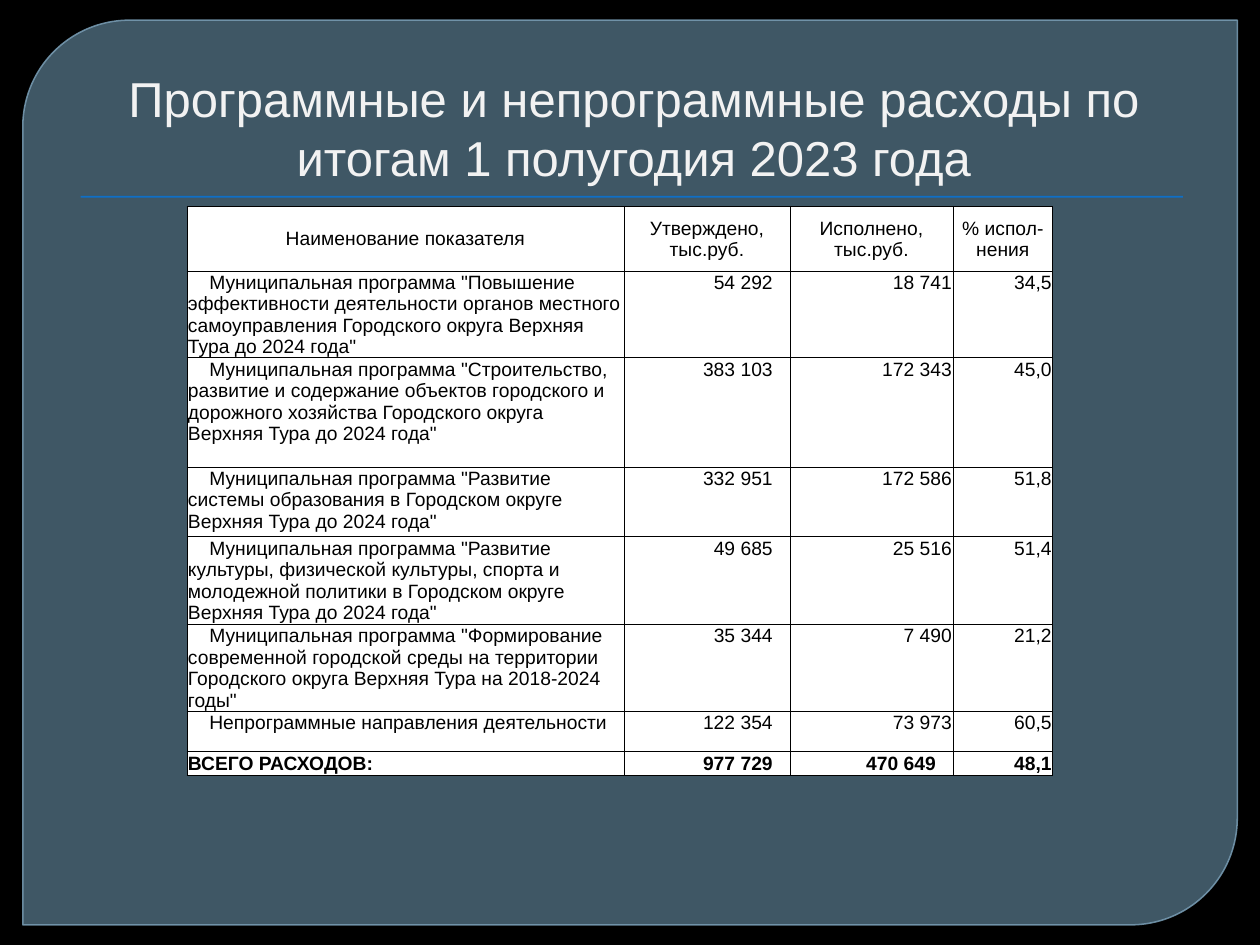
"""Builds the slide on programme and other spending for the first half of 2023."""
from lxml.etree import SubElement
from pptx import Presentation
from pptx.dml.color import RGBColor
from pptx.enum.shapes import MSO_SHAPE
from pptx.enum.text import MSO_ANCHOR, MSO_AUTO_SIZE, PP_ALIGN
from pptx.oxml.ns import qn
from pptx.util import Pt

TITLE = "Программные и непрограммные расходы по итогам 1 полугодия 2023 года"
HEAD = ("Наименование показателя", "Утверждено, тыс.руб.", "Исполнено, тыс.руб.", "% испол-нения")
PLAN = 'Муниципальная программа "{}"'
ROWS = [
    (PLAN.format("Повышение эффективности деятельности органов местного самоуправления "
                 "Городского округа Верхняя Тура до 2024 года"), "54 292", "18 741", "34,5"),
    (PLAN.format("Строительство, развитие и содержание объектов городского и дорожного "
                 "хозяйства Городского округа Верхняя Тура до 2024 года"), "383 103", "172 343", "45,0"),
    (PLAN.format("Развитие системы образования в Городском округе Верхняя Тура до 2024 года"),
     "332 951", "172 586", "51,8"),
    (PLAN.format("Развитие культуры, физической культуры, спорта и молодежной политики "
                 "в Городском округе Верхняя Тура до 2024 года"), "49 685", "25 516", "51,4"),
    (PLAN.format("Формирование современной городской среды на территории Городского округа "
                 "Верхняя Тура на 2018-2024 годы"), "35 344", "7 490", "21,2"),
    ("Непрограммные направления деятельности", "122 354", "73 973", "60,5"),
]
TOTAL = ("ВСЕГО РАСХОДОВ:", "977 729", "470 649", "48,1")
WIDTHS = (249.8, 94.8, 93.2, 57)
HEIGHTS = (37, 49.6, 62.4, 39.8, 50.2, 49.7, 23, 13.3)
COLORS = {"back": "000000", "panel": "61869C", "edge": "779BB2", "rule": "0F6FC6",
          "title": "F2F2F2", "cell": "FFFFFF", "ink": "000000"}


def paint(fill, name, alpha=None):
    fill.solid()
    fill.fore_color.rgb = RGBColor.from_string(COLORS[name])
    if alpha:
        tint = fill._xPr.find(".//" + qn("a:srgbClr"))
        SubElement(tint, qn("a:alpha")).set("val", str(alpha * 1000))


def style(para, size, name, align, bold=False):
    para.alignment = align
    font = para.font
    font.name, font.size, font.bold = "Arial", Pt(size), bold
    font.color.rgb = RGBColor.from_string(COLORS[name])


def add_box(shapes, kind, box, name, alpha=None):
    shape = shapes.add_shape(kind, *map(Pt, box))
    shape.shadow.inherit = False
    paint(shape.fill, name, alpha)
    shape.line.fill.background()
    return shape


def add_edges(cell):
    props = cell._tc.get_or_add_tcPr()
    for spot, side in enumerate(("a:lnL", "a:lnR", "a:lnT", "a:lnB")):
        line = SubElement(props, qn(side), w=str(Pt(0.5)))
        props.insert(spot, line)
        fill = SubElement(line, qn("a:solidFill"))
        SubElement(fill, qn("a:srgbClr"), val=COLORS["ink"])


def fill_cell(cell, text, row, col):
    head, total = row == 0, row == len(HEIGHTS) - 1
    cell.text = text
    cell.margin_left = cell.margin_right = cell.margin_top = Pt(0.6)
    cell.margin_bottom = 0
    cell.vertical_anchor = MSO_ANCHOR.MIDDLE if head else MSO_ANCHOR.TOP
    para = cell.text_frame.paragraphs[0]
    align = PP_ALIGN.CENTER if head else PP_ALIGN.RIGHT if col else PP_ALIGN.LEFT
    style(para, 11, "ink", align, total)
    if total and col == 0:
        cell.vertical_anchor = MSO_ANCHOR.BOTTOM
    elif not head and col == 0:
        para._p.get_or_add_pPr().set("indent", str(Pt(12.2)))
    if not head and (col == 1 or total and col == 2):
        cell.margin_right = Pt(9.8)
    paint(cell.fill, "cell")
    add_edges(cell)


def add_grid(shapes):
    lines = [HEAD, *ROWS, TOTAL]
    frame = shapes.add_table(len(lines), len(HEAD), Pt(106.8), Pt(117.9),
                             Pt(sum(WIDTHS)), Pt(sum(HEIGHTS)))
    grid = frame.table
    for col, width in zip(grid.columns, WIDTHS):
        col.width = Pt(width)
    for row, height in zip(grid.rows, HEIGHTS):
        row.height = Pt(height)
    for row, line in enumerate(lines):
        for col, text in enumerate(line):
            fill_cell(grid.cell(row, col), text, row, col)


def main():
    deck = Presentation()
    deck.slide_width, deck.slide_height = Pt(720), Pt(540)
    slide = deck.slides.add_slide(deck.slide_layouts[5])
    shapes = slide.shapes
    paint(slide.background.fill, "back")

    panel = add_box(shapes, MSO_SHAPE.ROUND_2_DIAG_RECTANGLE, (13, 11.5, 694, 517), "panel", 65)
    panel.adjustments[0], panel.adjustments[1] = 0.118, 0
    paint(panel.line.fill, "edge", 88)
    panel.line.width = Pt(0.87)
    add_box(shapes, MSO_SHAPE.RECTANGLE, (46, 112, 630, 1), "rule")

    title = shapes.title
    shapes._spTree.append(title._element)
    title.left, title.top, title.width, title.height = map(Pt, (36, 20, 648, 90))
    frame = title.text_frame
    frame.text = TITLE
    frame.word_wrap = True
    frame.auto_size = MSO_AUTO_SIZE.NONE
    frame.vertical_anchor = MSO_ANCHOR.BOTTOM
    para = frame.paragraphs[0]
    style(para, 28, "title", PP_ALIGN.CENTER)
    para._p.get_or_add_pPr().set("marL", str(Pt(4.3)))

    add_grid(shapes)
    deck.save("out.pptx")


if __name__ == "__main__":
    main()
